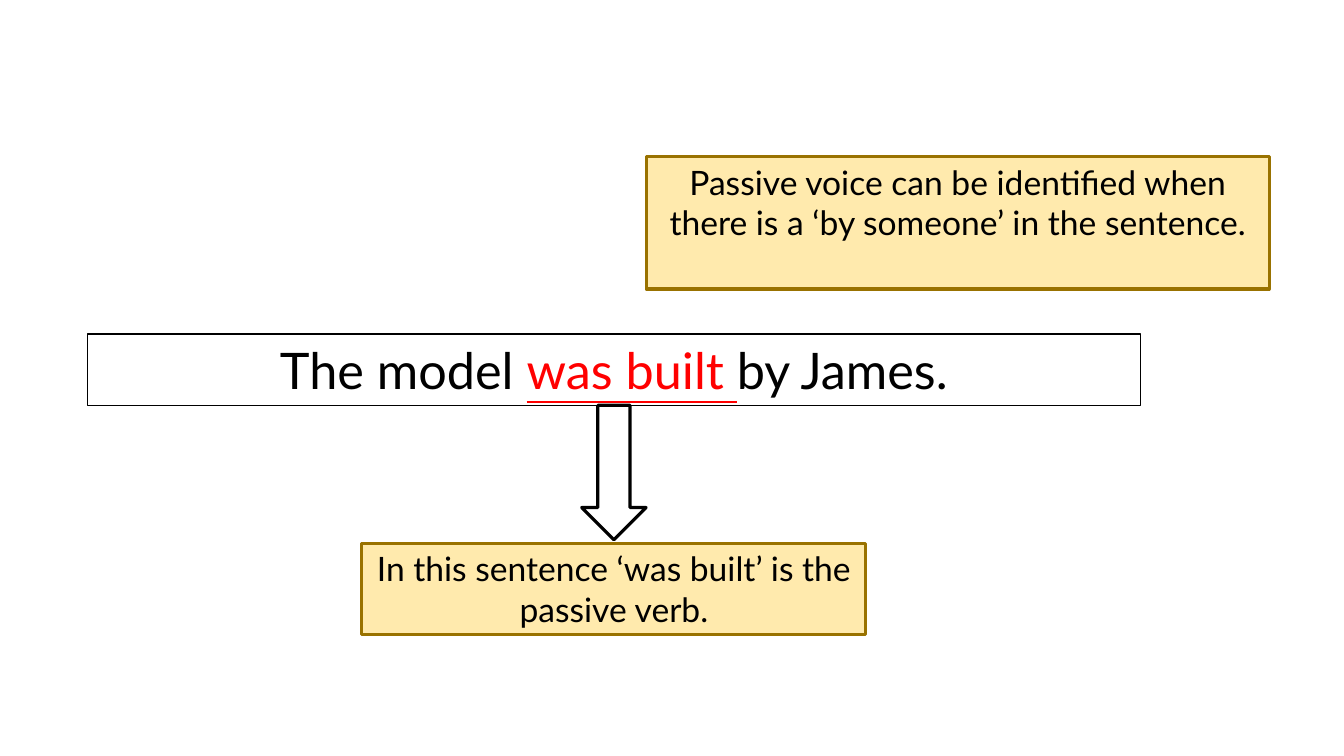
from pptx import Presentation
from pptx.dml.color import RGBColor
from pptx.enum.shapes import MSO_SHAPE
from pptx.enum.text import MSO_ANCHOR, PP_ALIGN
from pptx.util import Pt

COLORS = {
    "black": "000000",
    "white": "FFFFFF",
    "red": "FF0000",
    "cream": "FFEAAD",
    "gold": "997200",
}
FONT = "Lato"


def color(name):
    return RGBColor.from_string(COLORS[name])


def add_block(slide, kind, box, fill, line, line_width):
    shape = slide.shapes.add_shape(kind, *(Pt(length) for length in box))
    shape.shadow.inherit = False
    shape.fill.solid()
    shape.fill.fore_color.rgb = color(fill)
    shape.line.color.rgb = color(line)
    shape.line.width = Pt(line_width)
    return shape


def prepare_paragraph(shape):
    text_frame = shape.text_frame
    text_frame.word_wrap = True
    text_frame.vertical_anchor = MSO_ANCHOR.TOP
    paragraph = text_frame.paragraphs[0]
    paragraph.alignment = PP_ALIGN.CENTER
    return paragraph


def format_run(run, size, font_color="black", underline=False):
    run.font.name = FONT
    run.font.size = Pt(size)
    run.font.color.rgb = color(font_color)
    run.font.underline = underline


def add_sentence(slide, box, before, verb, after):
    shape = add_block(slide, MSO_SHAPE.RECTANGLE, box, "white", "black", 1)
    paragraph = prepare_paragraph(shape)
    for text in (before, verb, after):
        run = paragraph.add_run()
        run.text = text
        is_verb = text == verb
        format_run(run, 36, "red" if is_verb else "black", is_verb)


def add_note(slide, box, text):
    shape = add_block(slide, MSO_SHAPE.RECTANGLE, box, "cream", "gold", 2.25)
    paragraph = prepare_paragraph(shape)
    paragraph.text = text
    format_run(paragraph.runs[0], 24)


def add_passive_voice(slide, box):
    left, top, width, height = box
    center = left + width / 2
    bottom = top + height
    arrow_width, arrow_height = 46, 96
    note_width, note_height = 360, 65.5

    add_sentence(slide, box, "The model ", "was built ", "by James.")
    add_note(
        slide,
        (center - note_width / 2, bottom + 98.5, note_width, note_height),
        "In this sentence ‘was built’ is the passive verb.",
    )
    add_block(
        slide,
        MSO_SHAPE.DOWN_ARROW,
        (center - arrow_width / 2, bottom, arrow_width, arrow_height),
        "white",
        "black",
        2.25,
    )
    add_note(
        slide,
        (center + arrow_width / 2, top - 126.5, 445, 94.5),
        "Passive voice can be identified when there is a ‘by someone’ in the sentence.",
    )


def main():
    presentation = Presentation()
    presentation.slide_width = Pt(960)
    presentation.slide_height = Pt(540)
    slide = presentation.slides.add_slide(presentation.slide_layouts[6])
    add_passive_voice(slide, (62.5, 238.5, 752, 51))
    presentation.save("out.pptx")


if __name__ == "__main__":
    main()
